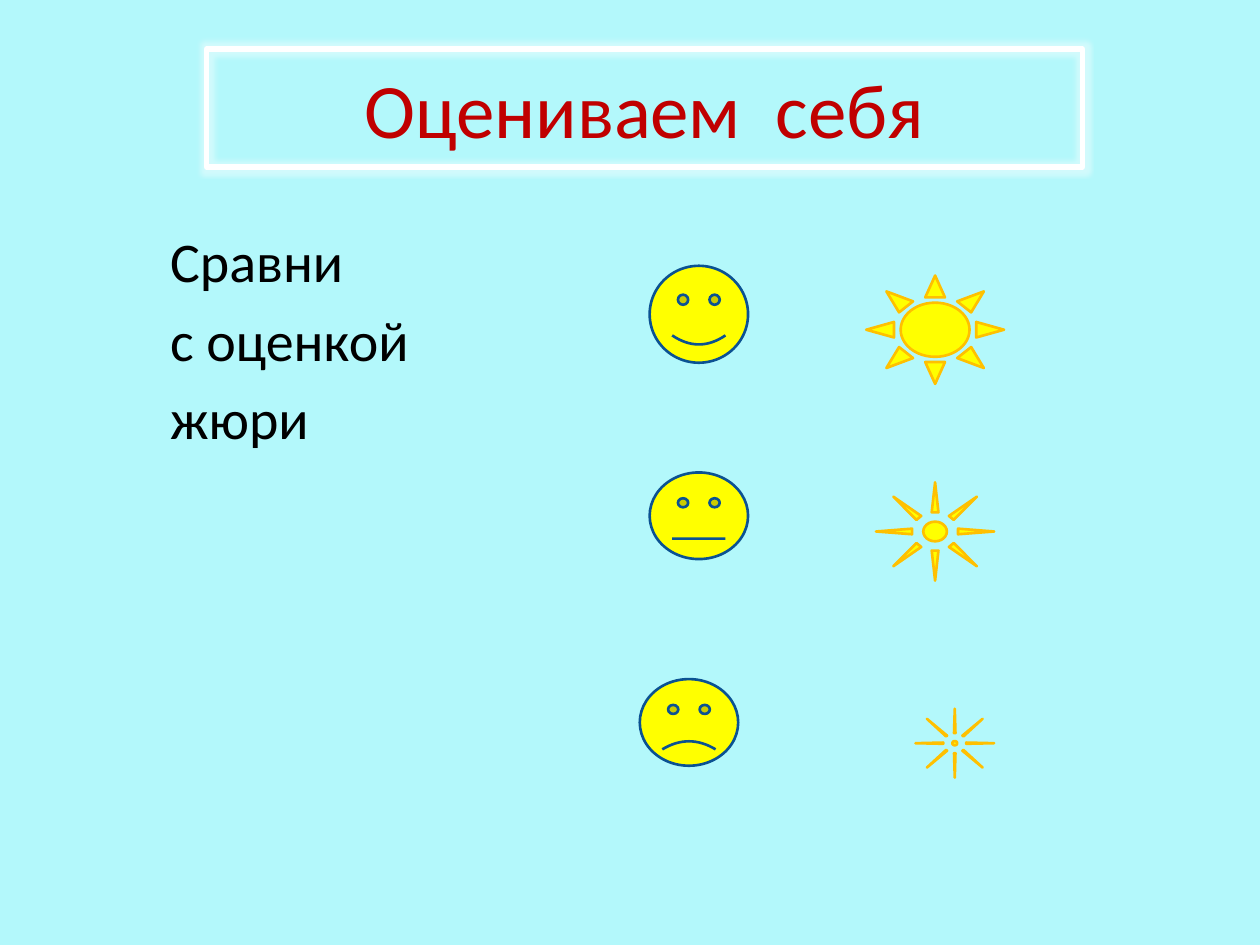
from lxml import etree
from pptx import Presentation
from pptx.dml.color import RGBColor
from pptx.enum.shapes import MSO_SHAPE as SHAPE
from pptx.enum.text import MSO_ANCHOR, MSO_AUTO_SIZE, PP_ALIGN
from pptx.oxml import parse_xml
from pptx.oxml.ns import nsdecls, qn
from pptx.util import Pt

COLORS = {
    "sky": "B3F8FB",
    "heading": "C00000",
    "text": "000000",
    "frame": "FFFFFF",
    "yellow": "FFFF00",
    "face_line": "0B5292",
    "sun_line": "FFC000",
}


def rgb(name):
    return RGBColor.from_string(COLORS[name])


def place(item, left, top, width, height):
    item.left, item.top = Pt(left), Pt(top)
    item.width, item.height = Pt(width), Pt(height)


deck = Presentation()
deck.slide_width, deck.slide_height = Pt(720), Pt(540)
slide = deck.slides.add_slide(deck.slide_layouts[1])
slide.background.fill.solid()
slide.background.fill.fore_color.rgb = rgb("sky")

heading = slide.shapes.title
place(heading, 118, 28, 500.5, 67.5)
heading.line.color.rgb = rgb("frame")
heading.line.width = Pt(3)
heading._element.spPr.append(parse_xml(
    f'<a:effectLst {nsdecls("a")}><a:glow rad="63500"><a:srgbClr val="{COLORS["frame"]}">'
    '<a:alpha val="40000"/></a:srgbClr></a:glow></a:effectLst>'))
heading.text_frame.text = "Оцениваем  себя"
heading.text_frame.auto_size = MSO_AUTO_SIZE.NONE
heading.text_frame.vertical_anchor = MSO_ANCHOR.MIDDLE
heading_line = heading.text_frame.paragraphs[0]
heading_line.alignment = PP_ALIGN.CENTER
heading_line.font.name = "Calibri"
heading_line.font.size = Pt(44)
heading_line.font.color.rgb = rgb("heading")

task = slide.placeholders[1]
place(task, 90, 126, 517.5, 356.5)
task.text_frame.text = "Сравни\nс оценкой\nжюри"
task.text_frame.auto_size = MSO_AUTO_SIZE.NONE
for index, task_line in enumerate(task.text_frame.paragraphs):
    properties = task_line._p.get_or_add_pPr()
    properties.set("marL", str(Pt(27)))
    properties.set("indent", str(Pt(-27)))
    etree.SubElement(properties, qn("a:buNone"))
    task_line.space_before = Pt(6.4 if index else 0)
    task_line.font.name = "Calibri"
    task_line.font.size = Pt(32)
    task_line.font.color.rgb = rgb("text")

marks = [
    (SHAPE.SMILEY_FACE, "face_line", 0.05, (371.25, 151.9, 56.25, 55.4)),
    (SHAPE.SMILEY_FACE, "face_line", 0, (371.25, 270, 56.25, 49.5)),
    (SHAPE.SMILEY_FACE, "face_line", -0.05, (365.6, 388.1, 56.25, 49.5)),
    (SHAPE.SUN, "sun_line", 0.25, (495, 157.5, 78.75, 61.9)),
    (SHAPE.SUN, "sun_line", 0.4, (500.6, 275.6, 67.5, 56.25)),
    (SHAPE.SUN, "sun_line", 0.47, (523.1, 405, 45, 39.4)),
]
for preset, outline, mood, box in marks:
    mark = slide.shapes.add_shape(preset, *map(Pt, box))
    mark.adjustments[0] = mood
    mark.shadow.inherit = False
    mark.fill.solid()
    mark.fill.fore_color.rgb = rgb("yellow")
    mark.line.color.rgb = rgb(outline)
    mark.line.width = Pt(1.5)

deck.save("out.pptx")
